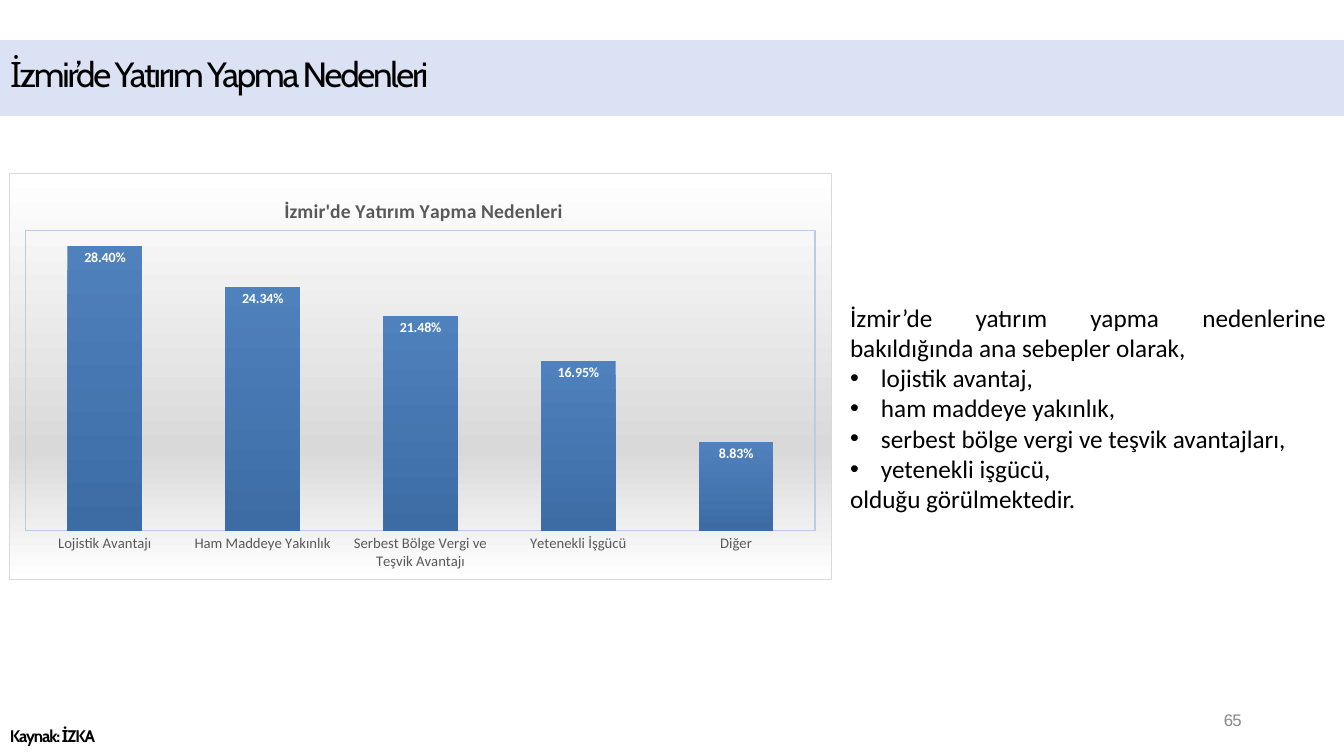
from dataclasses import dataclass

from lxml import etree
from pptx import Presentation, util as u
from pptx.chart.data import CategoryChartData
from pptx.dml.color import RGBColor
from pptx.enum import chart as ch, shapes, text
from pptx.oxml import parse_xml
from pptx.oxml.ns import nsdecls, qn

PX = 914400 / 100.8  # EMU in one px


@dataclass(frozen=True)
class Theme:
    heading: str = "Cabin"
    body: str = "Calibri"
    number: str = "Arial"
    ink: str = "000000"
    band: str = "DAE2F3"
    grey: str = "888888"
    label: str = "595959"
    white: str = "FFFFFF"
    border: str = "D9D9D9"
    plot_border: str = "B8CCE4"
    chart_stops: tuple = ((0, "FFFFFF"), (68, "D9D9D9"), (100, "FFFFFF"))
    bar_stops: tuple = ((0, "4F81BD"), (100, "3D6CA4"))
    title_size: float = 25
    body_size: float = 18
    small_size: float = 12
    chart_title_size: float = 14
    axis_size: float = 10.5
    value_size: float = 10


def px(*lengths):
    return [u.Emu(round(n * PX)) for n in lengths]


def apply(target, **values):
    for name, value in values.items():
        setattr(target, name, value)


def style(font, name, size, color, bold=False):
    apply(font, name=name, size=u.Pt(size), bold=bold)
    font.color.rgb = RGBColor.from_string(color)


def area_format(tag, stops=(), line=None):
    """Shape properties with a downward gradient and an optional outline."""
    fill = "<a:noFill/>"
    if stops:
        marks = "".join(f'<a:gs pos="{at * 1000}"><a:srgbClr val="{color}"/></a:gs>'
                        for at, color in stops)
        fill = (f"<a:gradFill><a:gsLst>{marks}</a:gsLst>"
                '<a:lin ang="5400000" scaled="0"/></a:gradFill>')
    outline = "<a:noFill/>"
    if line:
        outline = f'<a:solidFill><a:srgbClr val="{line}"/></a:solidFill>'
    return parse_xml(f'<{tag} {nsdecls("c", "a")}>{fill}'
                     f'<a:ln w="9525">{outline}</a:ln></{tag}>')


class SlideBuilder:
    def __init__(self, slide, theme):
        self.slide, self.theme = slide, theme

    def band(self, *box):
        band = self.slide.shapes.add_shape(shapes.MSO_SHAPE.RECTANGLE, *px(*box))
        band.shadow.inherit = False
        band.fill.solid()
        band.fill.fore_color.rgb = RGBColor.from_string(self.theme.band)
        band.line.fill.background()
        self.slide.shapes._spTree.insert(2, band._element)  # behind the title

    def frame(self, shape, box, margins):
        apply(shape, **dict(zip(("left", "top", "width", "height"), px(*box))))
        sides = ("margin_left", "margin_top", "margin_right", "margin_bottom")
        frame = shape.text_frame
        apply(frame, word_wrap=True, auto_size=text.MSO_AUTO_SIZE.NONE,
              vertical_anchor=text.MSO_ANCHOR.TOP, **dict(zip(sides, px(*margins))))
        return frame

    def line(self, frame, words, font, tracking, spacing):
        paragraph = frame.paragraphs[0]
        apply(paragraph, alignment=text.PP_ALIGN.LEFT, line_spacing=spacing)
        run = paragraph.add_run()
        run.text = words
        style(run.font, *font)
        run._r.get_or_add_rPr().set("spc", str(round(tracking * 100)))

    def title(self, words, *box):
        t = self.theme
        frame = self.frame(self.slide.shapes.title, box, (1, 1, 0, 0))
        self.line(frame, words, (t.heading, t.title_size, t.ink), -1.6, 1.0)

    def note(self, words, box, font, tracking):
        shape = self.slide.shapes.add_textbox(*px(*box))
        frame = self.frame(shape, box, (1, 0, 0, 0))
        self.line(frame, words, font, tracking, u.Pt(12.4))

    def reasons(self, intro, items, closing, *box):
        t = self.theme
        frame = self.frame(self.slide.placeholders[1], box, (10, 5, 10, 5))
        rows = [(intro, False), *((item, True) for item in items), (closing, False)]
        for index, (words, bulleted) in enumerate(rows):
            paragraph = frame.paragraphs[0] if index == 0 else frame.add_paragraph()
            paragraph.text = words
            apply(paragraph, alignment=text.PP_ALIGN.JUSTIFY,
                  space_before=u.Pt(0), line_spacing=1.0)
            indent = px(31)[0] if bulleted else 0
            props = paragraph._p.get_or_add_pPr()
            props.set("marL", str(indent))
            props.set("indent", str(-indent))
            if bulleted:
                etree.SubElement(props, qn("a:buFont")).set("typeface", t.number)
                etree.SubElement(props, qn("a:buChar")).set("char", "•")
            else:
                etree.SubElement(props, qn("a:buNone"))
            style(paragraph.font, t.body, t.body_size, t.ink)

    def column_chart(self, title, shares, *box):
        t = self.theme
        data = CategoryChartData(number_format="0.00%")
        data.categories = list(shares)
        data.add_series("Series 1", list(shares.values()))
        chart = self.slide.shapes.add_chart(
            ch.XL_CHART_TYPE.COLUMN_CLUSTERED, *px(*box), data).chart
        style(chart.font, t.body, t.value_size, t.ink)
        apply(chart, has_legend=False, has_title=True)

        # Chart title
        heading = chart.chart_title.text_frame
        heading.text = title
        style(heading.paragraphs[0].runs[0].font, t.body, t.chart_title_size, t.label, True)
        self.place(chart.chart_title._element, x=0.33, y=0.05)

        # Axes
        apply(chart.value_axis, visible=False, has_major_gridlines=False,
              minimum_scale=0, maximum_scale=0.3)
        axis = chart.category_axis
        apply(axis, major_tick_mark=ch.XL_TICK_MARK.NONE, has_major_gridlines=False)
        axis.format.line.fill.background()
        style(axis.tick_labels.font, t.body, t.axis_size, t.label)

        # Columns and their values
        plot = chart.plots[0]
        apply(plot, gap_width=111, vary_by_categories=False, has_data_labels=True)
        labels = plot.data_labels
        apply(labels, show_value=True, number_format="0.00%",
              number_format_is_linked=False, position=ch.XL_LABEL_POSITION.INSIDE_END)
        style(labels.font, t.body, t.value_size, t.white, True)
        series = plot.series[0]._element
        series.replace(series.get_or_add_spPr(), area_format("c:spPr", t.bar_stops))

        # Chart and plot backgrounds
        space = chart._chartSpace
        space.find(qn("c:chart")).addnext(area_format("c:spPr", t.chart_stops, t.border))
        plot_area = space.find(".//" + qn("c:plotArea"))
        plot_area.append(area_format("c:spPr", line=t.plot_border))
        self.place(plot_area, x=0.02, y=0.14, w=0.96, h=0.74)

    def place(self, part, **fractions):
        for old in part.findall(qn("c:layout")):
            part.remove(old)
        target = '<c:layoutTarget val="inner"/>' if "w" in fractions else ""
        modes = "".join(f'<c:{axis}Mode val="edge"/>' for axis in "xy")
        sizes = "".join(f'<c:{key} val="{value}"/>' for key, value in fractions.items())
        layout = parse_xml(f'<c:layout {nsdecls("c")}><c:manualLayout>{target}{modes}'
                           f"{sizes}</c:manualLayout></c:layout>")
        heading = part.find(qn("c:tx"))
        if heading is None:
            part.insert(0, layout)
        else:
            heading.addnext(layout)


def main():
    deck = Presentation()
    deck.slide_width, deck.slide_height = px(1344, 756)
    theme = Theme()
    page = SlideBuilder(deck.slides.add_slide(deck.slide_layouts[1]), theme)

    # Heading
    page.band(0, 40, 1344, 76)
    page.title("İzmir’de Yatırım Yapma Nedenleri", 9, 52, 797, 44)

    # Shares of each reason
    page.column_chart("İzmir'de Yatırım Yapma Nedenleri", {
        "Lojistik Avantajı": 0.284,
        "Ham Maddeye Yakınlık": 0.2434,
        "Serbest Bölge Vergi ve Teşvik Avantajı": 0.2148,
        "Yetenekli İşgücü": 0.1695,
        "Diğer": 0.0883,
    }, 9, 173, 823, 407)

    # Commentary
    page.reasons(
        "İzmir’de yatırım yapma nedenlerine bakıldığında ana sebepler olarak,",
        ["lojistik avantaj,", "ham maddeye yakınlık,",
         "serbest bölge vergi ve teşvik avantajları,", "yetenekli işgücü,"],
        "olduğu görülmektedir.", 840, 297, 496, 224)

    # Source and page number
    page.note("65", (1223, 713, 24, 19), (theme.number, theme.small_size, theme.grey), -0.6)
    page.note("Kaynak: İZKA", (9, 729, 310, 17),
              (theme.heading, theme.small_size, theme.ink, True), -0.8)
    deck.save("out.pptx")


if __name__ == "__main__":
    main()
